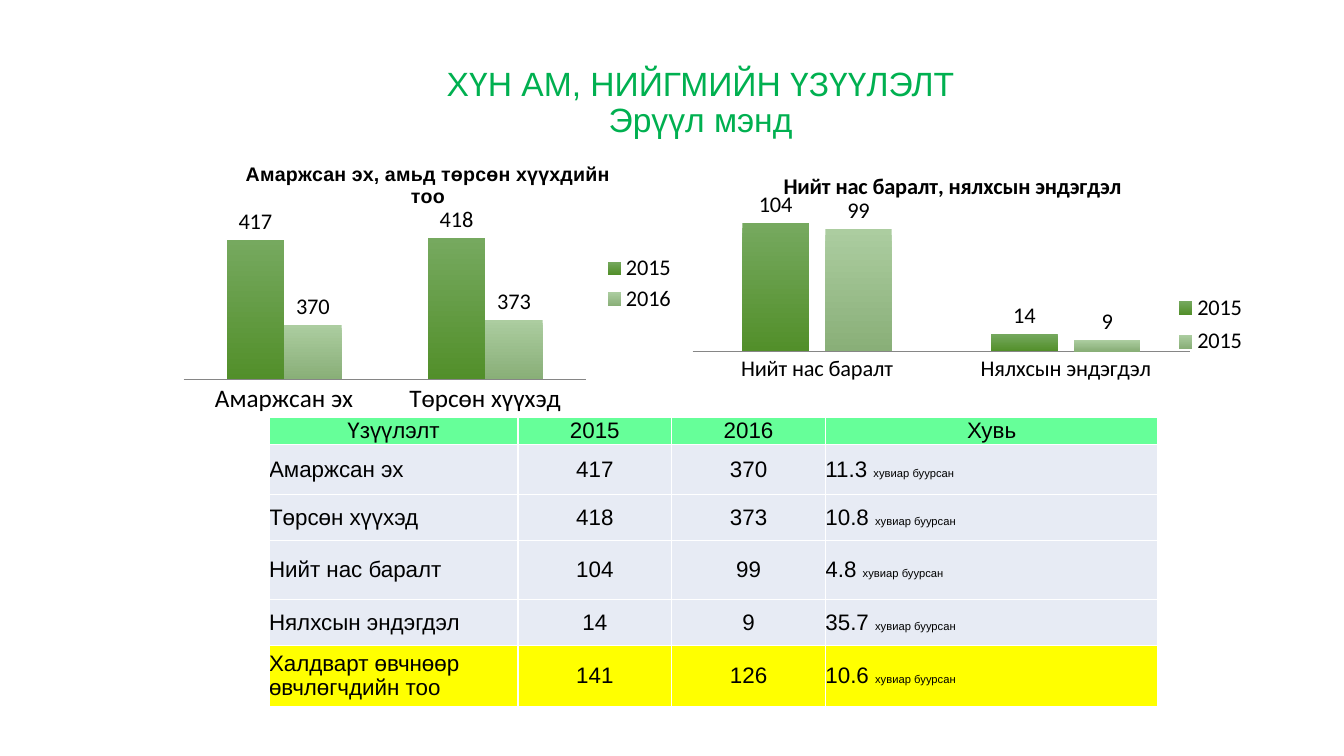
import pptx
import pptx.chart.data
import pptx.dml.color
import pptx.enum.chart
import pptx.enum.text
import pptx.oxml
import pptx.oxml.ns
import pptx.util
from pptx.util import Cm

CENTER = pptx.enum.text.PP_ALIGN.CENTER
LEFT = pptx.enum.text.PP_ALIGN.LEFT
MIDDLE = pptx.enum.text.MSO_ANCHOR.MIDDLE
YEAR_GRADIENTS = [("76A95F", "528F2A"), ("ACCDA0", "89AF78")]
HEADER_FILL, ROW_FILL, TOTAL_FILL = "66FF99", "E7EBF4", "FFFF00"


def color(hex_code):
    return pptx.dml.color.RGBColor.from_string(hex_code)


def set_font(font, size, name="Arial", hex_code="000000", bold=False):
    formats = {"size": pptx.util.Pt(size), "name": name, "bold": bold}
    for attribute, value in formats.items():
        setattr(font, attribute, value)
    font.color.rgb = color(hex_code)


def set_layout(parent, index, inner=False, **fractions):
    """Give a chart part a manual layout, in fractions of the chart's size."""
    for old in parent.findall(pptx.oxml.ns.qn("c:layout")):
        parent.remove(old)
    modes = '<c:layoutTarget val="inner"/>' if inner else ""
    modes += '<c:xMode val="edge"/><c:yMode val="edge"/>'
    sizes = "".join(f'<c:{key} val="{value}"/>' for key, value in fractions.items())
    parent.insert(index, pptx.oxml.parse_xml(
        f'<c:layout {pptx.oxml.ns.nsdecls("c")}><c:manualLayout>'
        f'{modes}{sizes}</c:manualLayout></c:layout>'))


def add_heading(slide, left, top, width, height):
    frame = slide.shapes.add_textbox(left, top, width, height).text_frame
    frame.word_wrap = True
    frame.vertical_anchor = MIDDLE
    heading = frame.paragraphs[0]
    heading.text = "ХҮН АМ, НИЙГМИЙН ҮЗҮҮЛЭЛТ\vЭрүүл мэнд"
    heading.alignment = CENTER
    heading.line_spacing = 0.9
    for run in heading.runs:
        set_font(run.font, 24, hex_code="00B050")


def add_year_chart(slide, box, title, title_font, categories, years, scale,
                   overlap, category_size, plot_layout, legend_layout, title_layout=None):
    """Draw a column chart with one series for each year."""
    chart_data = pptx.chart.data.CategoryChartData()
    chart_data.categories = categories
    for year, values in years:
        chart_data.add_series(year, values)
    chart = slide.shapes.add_chart(
        pptx.enum.chart.XL_CHART_TYPE.COLUMN_CLUSTERED, *box, chart_data).chart
    set_font(chart.font, 18, "Calibri")

    chart.has_title = True
    chart.chart_title.include_in_layout = False
    chart.chart_title.text_frame.text = title
    set_font(chart.chart_title.text_frame.paragraphs[0].runs[0].font, bold=True, **title_font)

    chart.has_legend = True
    chart.legend.position = pptx.enum.chart.XL_LEGEND_POSITION.RIGHT
    chart.legend.include_in_layout = False
    set_font(chart.legend.font, 16, "Calibri")

    chart.value_axis.minimum_scale, chart.value_axis.maximum_scale = scale
    chart.value_axis.has_major_gridlines = False
    chart.value_axis.visible = False
    chart.category_axis.major_tick_mark = pptx.enum.chart.XL_TICK_MARK.NONE
    chart.category_axis.format.line.color.rgb = color("868686")
    set_font(chart.category_axis.tick_labels.font, category_size, "Calibri")

    plot = chart.plots[0]
    for attribute, value in {"gap_width": 150, "overlap": overlap,
                             "vary_by_categories": False}.items():
        setattr(plot, attribute, value)
    for series, gradient in zip(plot.series, YEAR_GRADIENTS):
        fill = series.format.fill
        fill.gradient()
        fill.gradient_angle = 270
        for stop, hex_code in zip(fill.gradient_stops, gradient):
            stop.color.rgb = color(hex_code)
        labels = series.data_labels
        labels.show_value = True
        labels.position = pptx.enum.chart.XL_LABEL_POSITION.OUTSIDE_END
        set_font(labels.font, 16, "Calibri")

    chart_xml = chart.element.chart
    set_layout(chart_xml.plotArea, 0, inner=True, **plot_layout)
    set_layout(chart_xml.find(pptx.oxml.ns.qn("c:legend")), 1, **legend_layout)
    if title_layout:
        set_layout(chart_xml.find(pptx.oxml.ns.qn("c:title")), 1, **title_layout)


def fill_cell(cell, texts, fill, alignment):
    """Write (text, size) pairs as runs of one cell."""
    for side in ("left", "right", "top", "bottom"):
        setattr(cell, f"margin_{side}", 0)
    cell.vertical_anchor = MIDDLE
    cell.fill.solid()
    cell.fill.fore_color.rgb = color(fill)
    paragraph = cell.text_frame.paragraphs[0]
    paragraph.alignment = alignment
    for text, size in texts:
        run = paragraph.add_run()
        run.text = text
        set_font(run.font, size)


def add_indicator_table(slide, left, top, width, height):
    header = ("Үзүүлэлт", "2015", "2016", "Хувь")
    indicators = [
        ("Амаржсан эх", "417", "370", "11.3"),
        ("Төрсөн хүүхэд", "418", "373", "10.8"),
        ("Нийт нас баралт", "104", "99", "4.8"),
        ("Нялхсын эндэгдэл", "14", "9", "35.7"),
        ("Халдварт өвчнөөр өвчлөгчдийн тоо", "141", "126", "10.6"),
    ]
    table = slide.shapes.add_table(
        len(indicators) + 1, len(header), left, top, width, height).table
    table.first_row = table.horz_banding = False
    for column, share in zip(table.columns, (0.28, 0.173, 0.173, 0.374)):
        column.width = round(width * share)
    for row, share in zip(table.rows, (0.085, 0.174, 0.163, 0.206, 0.16, 0.212)):
        row.height = round(height * share)

    for cell, text in zip(table.rows[0].cells, header):
        fill_cell(cell, [(text, 16)], HEADER_FILL, CENTER)
    for number, indicator in enumerate(indicators, 1):
        fill = TOTAL_FILL if number == len(indicators) else ROW_FILL
        name, *counts, percent = indicator
        cells = list(table.rows[number].cells)
        fill_cell(cells[0], [(name, 16)], fill, LEFT)
        for cell, count in zip(cells[1:3], counts):
            fill_cell(cell, [(count, 16)], fill, CENTER)
        fill_cell(cells[3], [(percent + " ", 16), ("хувиар буурсан", 8)], fill, LEFT)


def main():
    presentation = pptx.Presentation()
    presentation.slide_width, presentation.slide_height = Cm(33.87), Cm(19.05)
    slide = presentation.slides.add_slide(presentation.slide_layouts[6])
    add_heading(slide, Cm(2.54), Cm(1.27), Cm(30.23), Cm(2.67))
    add_year_chart(
        slide, (Cm(4.37), Cm(3.71), Cm(12.83), Cm(6.88)),
        "Амаржсан эх, амьд төрсөн хүүхдийн тоо", {"size": 14, "name": "Arial"},
        ("Амаржсан эх", "Төрсөн хүүхэд"),
        [("2015", (417, 418)), ("2016", (370, 373))],
        scale=(340, 420), overlap=0, category_size=18,
        plot_layout={"x": 0.02, "y": 0.32, "w": 0.79, "h": 0.53},
        legend_layout={"x": 0.84, "y": 0.38, "w": 0.15, "h": 0.24})
    add_year_chart(
        slide, (Cm(17.02), Cm(3.73), Cm(14.58), Cm(6.65)),
        "Нийт нас баралт, нялхсын эндэгдэл", {"size": 16, "name": "Calibri"},
        ("Нийт нас баралт", "Нялхсын эндэгдэл"),
        [("2015", (104, 14)), ("2015", (99, 9))],
        scale=(0, 120), overlap=-25, category_size=16,
        plot_layout={"x": 0.03, "y": 0.21, "w": 0.86, "h": 0.56},
        legend_layout={"x": 0.86, "y": 0.53, "w": 0.13, "h": 0.28},
        title_layout={"x": 0.18, "y": 0.07})
    add_indicator_table(slide, Cm(6.78), Cm(10.52), Cm(22.4), Cm(7.21))
    presentation.save("out.pptx")


if __name__ == "__main__":
    main()
